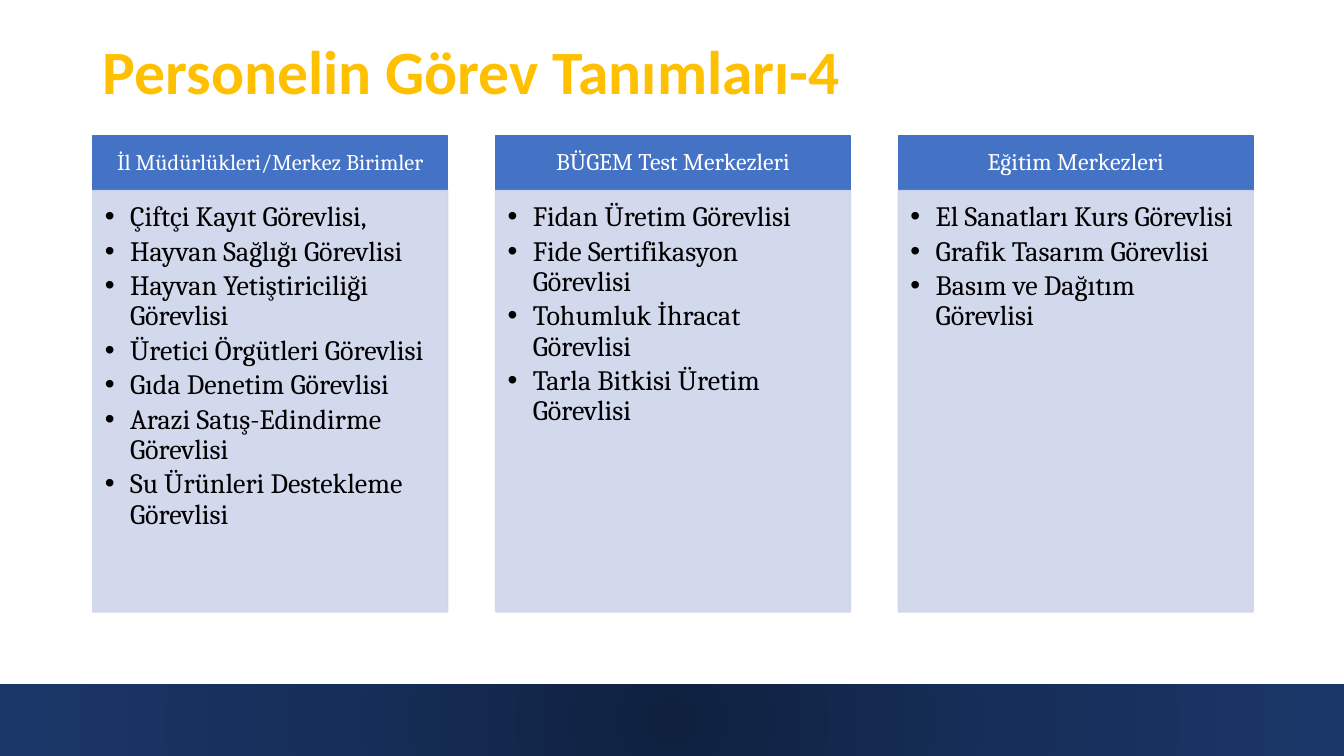
from dataclasses import dataclass

from lxml import etree
from pptx import Presentation
from pptx.dml.color import RGBColor
from pptx.enum.shapes import MSO_SHAPE
from pptx.enum.text import MSO_ANCHOR, PP_ALIGN
from pptx.oxml.ns import qn
from pptx.shapes.autoshape import Shape
from pptx.slide import Slide
from pptx.text.text import TextFrame
from pptx.util import Inches, Pt

RECTANGLE = MSO_SHAPE.RECTANGLE
TOP, MIDDLE = MSO_ANCHOR.TOP, MSO_ANCHOR.MIDDLE
LEFT, CENTER = PP_ALIGN.LEFT, PP_ALIGN.CENTER

GOLD, BLUE, LAVENDER = "FFC000", "4472C4", "CFD5EA"
WHITE, BLACK = "FFFFFF", "000000"
FOOTER_STOPS = ((0, "10213F"), (50, "162E59"), (100, "1B3769"))

COLUMN_LEFT, COLUMN_STEP, COLUMN_WIDTH = 0.92, 3.995, 3.52
HEADER_TOP, HEADER_HEIGHT, BODY_HEIGHT = 1.35, 0.54, 4.18
BULLET_INDENT = 0.25


@dataclass
class Column:
    heading: str
    heading_size: int
    duties: list[str]


COLUMNS = [
    Column("İl Müdürlükleri/Merkez Birimler", 16, [
        "Çiftçi Kayıt Görevlisi,",
        "Hayvan Sağlığı Görevlisi",
        "Hayvan Yetiştiriciliği Görevlisi",
        "Üretici Örgütleri Görevlisi",
        "Gıda Denetim Görevlisi",
        "Arazi Satış-Edindirme Görevlisi",
        "Su Ürünleri Destekleme Görevlisi",
    ]),
    Column("BÜGEM Test Merkezleri", 17, [
        "Fidan Üretim Görevlisi",
        "Fide Sertifikasyon Görevlisi",
        "Tohumluk İhracat Görevlisi",
        "Tarla Bitkisi Üretim Görevlisi",
    ]),
    Column("Eğitim Merkezleri", 17, [
        "El Sanatları Kurs Görevlisi",
        "Grafik Tasarım Görevlisi",
        "Basım ve Dağıtım Görevlisi",
    ]),
]


def rgb(color: str) -> RGBColor:
    return RGBColor.from_string(color)


def add_rectangle(slide: Slide, left: float, top: float, width: float,
                  height: float) -> Shape:
    box = slide.shapes.add_shape(RECTANGLE, Inches(left), Inches(top),
                                 Inches(width), Inches(height))
    box.shadow.inherit = False
    return box


def paint(box: Shape, color: str, opacity: int = 100) -> None:
    """Give the box a fill and a 1 pt line of one colour and opacity."""
    box.fill.solid()
    box.line.width = Pt(1)
    for fill in (box.fill, box.line.fill):
        fill.solid()
        fill.fore_color.rgb = rgb(color)
    if opacity < 100:
        for tag in box._element.spPr.iter(qn("a:srgbClr")):
            etree.SubElement(tag, qn("a:alpha"), val=str(opacity * 1000))


def set_frame(frame: TextFrame, anchor: MSO_ANCHOR, left: float, top: float,
              right: float, bottom: float) -> None:
    frame.word_wrap = True
    frame.vertical_anchor = anchor
    frame.margin_left, frame.margin_top = Inches(left), Inches(top)
    frame.margin_right, frame.margin_bottom = Inches(right), Inches(bottom)


def write(frame: TextFrame, lines: list[str], font: str, size: int, color: str,
          align: PP_ALIGN = LEFT, bold: bool = False, bulleted: bool = False) -> None:
    for index, line in enumerate(lines):
        para = frame.paragraphs[0] if index == 0 else frame.add_paragraph()
        para.alignment = align
        para.line_spacing = 0.9
        if bulleted:
            para.space_after = Pt(3)
            properties = para._p.get_or_add_pPr()
            properties.set("marL", str(Inches(BULLET_INDENT)))
            properties.set("indent", str(-Inches(BULLET_INDENT)))
            etree.SubElement(properties, qn("a:buFont"), typeface="Arial")
            etree.SubElement(properties, qn("a:buChar"), char="•")
        span = para.add_run()
        span.text = line
        span.font.name = font
        span.font.size = Pt(size)
        span.font.bold = bold
        span.font.color.rgb = rgb(color)


def add_footer(slide: Slide) -> None:
    """Draw the bottom band with a gradient that spreads from its centre."""
    band = add_rectangle(slide, -0.01, 6.79, 13.35, 0.73)
    band.line.fill.background()
    band.fill.gradient()
    gradient = band._element.spPr.find(qn("a:gradFill"))
    for child in list(gradient):
        gradient.remove(child)
    stops = etree.SubElement(gradient, qn("a:gsLst"))
    for position, color in FOOTER_STOPS:
        stop = etree.SubElement(stops, qn("a:gs"), pos=str(position * 1000))
        etree.SubElement(stop, qn("a:srgbClr"), val=color)
    circle = etree.SubElement(gradient, qn("a:path"), {"path": "circle"})
    etree.SubElement(circle, qn("a:fillToRect"),
                     {side: "50000" for side in "ltrb"})


def add_title(slide: Slide) -> None:
    box = slide.shapes.add_textbox(Inches(0.92), Inches(0.27), Inches(11.5), Inches(0.93))
    set_frame(box.text_frame, MIDDLE, 0.1, 0.05, 0.1, 0.05)
    write(box.text_frame, ["Personelin Görev Tanımları-4"], "Calibri", 44, GOLD, bold=True)


def add_column(slide: Slide, column: Column, left: float) -> None:
    header = add_rectangle(slide, left, HEADER_TOP, COLUMN_WIDTH, HEADER_HEIGHT)
    paint(header, BLUE)
    set_frame(header.text_frame, MIDDLE, 0.12, 0.07, 0.12, 0.07)
    write(header.text_frame, [column.heading], "Cambria", column.heading_size, WHITE, CENTER)

    body = add_rectangle(slide, left, HEADER_TOP + HEADER_HEIGHT, COLUMN_WIDTH, BODY_HEIGHT)
    paint(body, LAVENDER, opacity=90)
    set_frame(body.text_frame, TOP, 0.12, 0.12, 0.16, 0.17)
    write(body.text_frame, column.duties, "Cambria", 20, BLACK, bulleted=True)


def main() -> None:
    deck = Presentation()
    deck.slide_width, deck.slide_height = Inches(13.33), Inches(7.5)
    slide = deck.slides.add_slide(deck.slide_layouts[6])
    add_footer(slide)
    add_title(slide)
    for index, column in enumerate(COLUMNS):
        add_column(slide, column, COLUMN_LEFT + index * COLUMN_STEP)
    deck.save("out.pptx")


if __name__ == "__main__":
    main()
